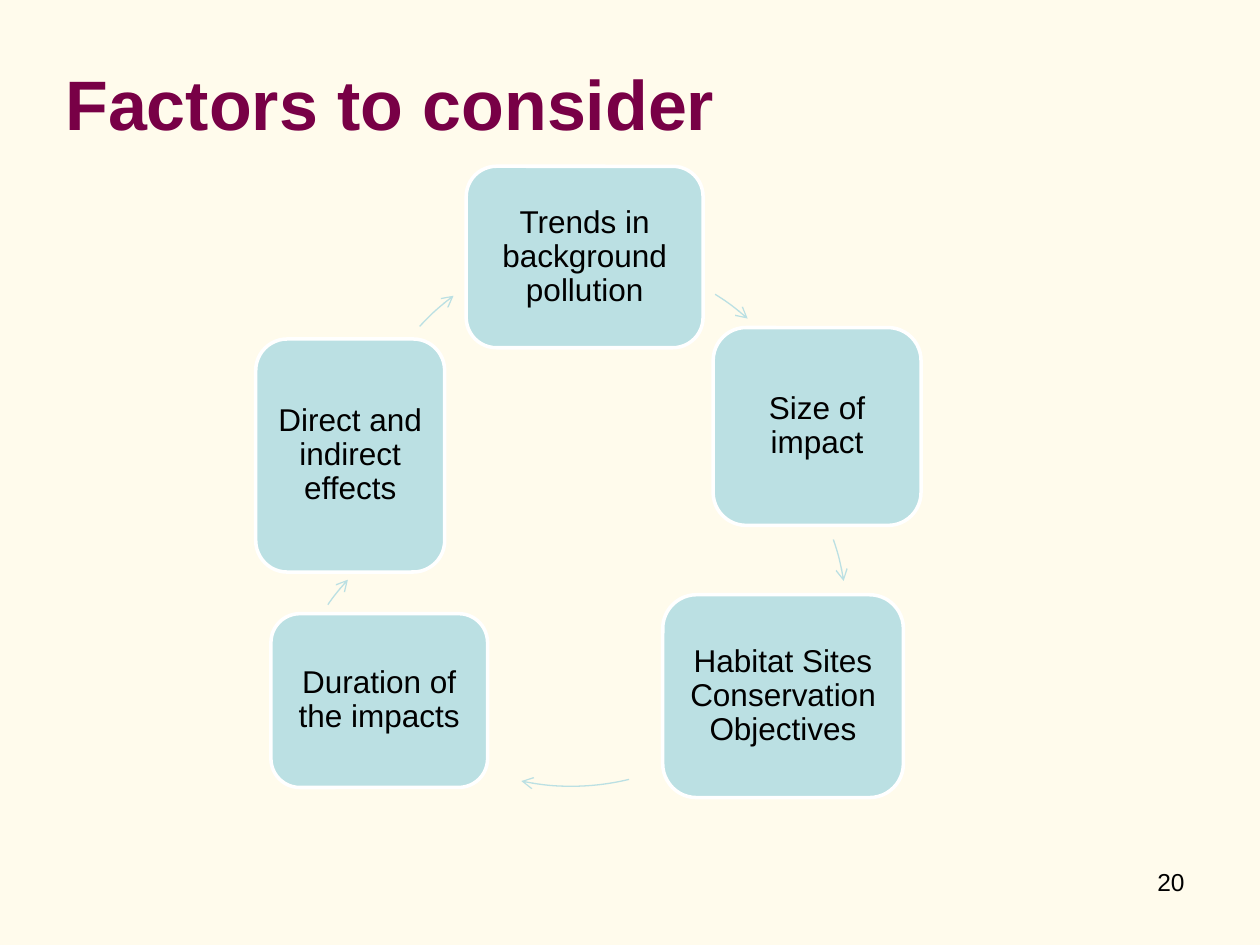
from dataclasses import dataclass

from lxml import etree
from pptx import Presentation
from pptx.dml.color import RGBColor
from pptx.enum.shapes import MSO_SHAPE
from pptx.enum.text import MSO_ANCHOR, PP_ALIGN
from pptx.oxml.ns import qn
from pptx.util import Inches, Pt

ROUNDED, ARC = MSO_SHAPE.ROUNDED_RECTANGLE, MSO_SHAPE.ARC
TOP, MIDDLE = MSO_ANCHOR.TOP, MSO_ANCHOR.MIDDLE
LEFT, CENTER, RIGHT = PP_ALIGN.LEFT, PP_ALIGN.CENTER, PP_ALIGN.RIGHT


@dataclass(frozen=True)
class Theme:
    """Colours, font and type sizes of the slide."""
    font: str = "Arial"
    background: RGBColor = RGBColor(0xFF, 0xFB, 0xEC)
    title: RGBColor = RGBColor(0x78, 0x00, 0x46)
    text: RGBColor = RGBColor(0, 0, 0)
    card: RGBColor = RGBColor(0xBB, 0xE0, 0xE3)
    border: RGBColor = RGBColor(0xFF, 0xFF, 0xFF)
    title_size: int = 40
    card_size: int = 18
    number_size: int = 14


THEME = Theme()
CYCLE_DIAMETER = 3.89
CARD_INSET = 0.07

FACTORS = [
    ("Trends in background pollution", (3.7, 1.32, 1.88, 1.44)),
    ("Size of impact", (5.66, 2.6, 1.65, 1.57)),
    ("Habitat Sites Conservation Objectives", (5.26, 4.72, 1.91, 1.61)),
    ("Duration of the impacts", (2.15, 4.87, 1.72, 1.38)),
    ("Direct and indirect effects", (2.03, 2.69, 1.5, 1.85)),
]

ARROWS = [
    (2.7, 2.04, 302, 311.5),
    (2.83, 2.97, 341, 351),
    (2.59, 2.35, 76.4, 101.8),
    (2.25, 3.97, 215, 222.5),
    (2.82, 1.96, 222.5, 233.2),
]


def write(box, text, size, color, align, anchor, bold=False):
    """Put one styled paragraph into a box and return it."""
    frame = box.text_frame
    frame.word_wrap = True
    frame.vertical_anchor = anchor
    para = frame.paragraphs[0]
    para.text = text
    para.alignment = align
    para.font.name = THEME.font
    para.font.size = Pt(size)
    para.font.bold = bold
    para.font.color.rgb = color
    return para


def add_label(page, bounds, *style, **options):
    """Add a text box with one paragraph."""
    box = page.shapes.add_textbox(*map(Inches, bounds))
    write(box, *style, **options)


def add_card(page, text, bounds):
    """Add a rounded card that names one factor."""
    card = page.shapes.add_shape(ROUNDED, *map(Inches, bounds))
    card.shadow.inherit = False
    card.fill.solid()
    card.fill.fore_color.rgb = THEME.card
    card.line.color.rgb = THEME.border
    card.line.width = Pt(2)
    frame = card.text_frame
    frame.margin_left = frame.margin_right = Inches(CARD_INSET)
    frame.margin_top = frame.margin_bottom = Inches(CARD_INSET)
    para = write(card, text, THEME.card_size, THEME.text, CENTER, MIDDLE)
    para.line_spacing = 0.9


def add_arc_arrow(page, left, top, start, end):
    """Add a clockwise arc arrow between two angles in degrees."""
    side = Inches(CYCLE_DIAMETER)
    arc = page.shapes.add_shape(ARC, Inches(left), Inches(top), side, side)
    arc.shadow.inherit = False
    arc.fill.background()
    arc.line.color.rgb = THEME.card
    arc.line.width = Pt(0.75)
    for index, angle in enumerate((start, end)):
        arc.adjustments[index] = angle * 0.6
    outline = arc.element.spPr.find(qn("a:ln"))
    etree.SubElement(outline, qn("a:tailEnd"), type="arrow")


def main():
    """Build the slide and save the deck."""
    deck = Presentation()
    deck.slide_width, deck.slide_height = Inches(10), Inches(7.5)
    page = deck.slides.add_slide(deck.slide_layouts[6])
    page.background.fill.solid()
    page.background.fill.fore_color.rgb = THEME.background

    add_label(page, (0.42, 0.44, 7.89, 0.74), "Factors to consider",
              THEME.title_size, THEME.title, LEFT, MIDDLE, bold=True)
    for (text, bounds), arrow in zip(FACTORS, ARROWS):
        add_card(page, text, bounds)
        add_arc_arrow(page, *arrow)
    add_label(page, (7.17, 6.83, 2.33, 0.52), "20",
              THEME.number_size, THEME.text, RIGHT, TOP)
    deck.save("out.pptx")


if __name__ == "__main__":
    main()
